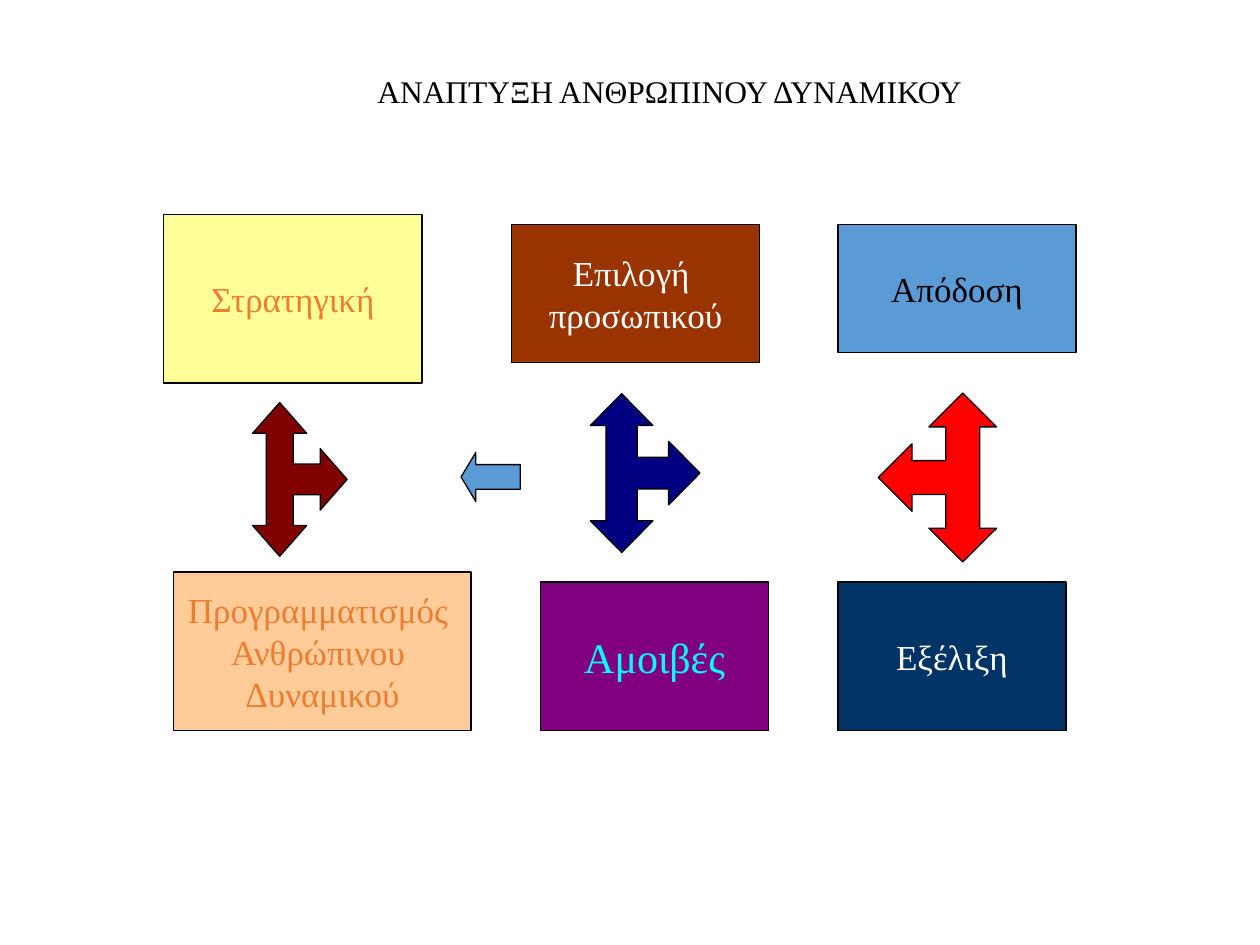
import pptx
import pptx.util
import pptx.dml.color
import pptx.enum.shapes
import pptx.enum.text

Inches = pptx.util.Inches
Pt = pptx.util.Pt
MSO_SHAPE = pptx.enum.shapes.MSO_SHAPE
ANCHOR = pptx.enum.text.MSO_ANCHOR
FONT = "Times New Roman"

# left, top, width, height, fill, text colour, text size, lines
BOXES = [
    (1.3, 1.7, 2.05, 1.34, "FFFF99", "ED7D31", 20, ["Στρατηγική"]),
    (4.06, 1.78, 1.97, 1.1, "993300", "FFFFFF", 20, ["Επιλογή ", "προσωπικού"]),
    (6.65, 1.78, 1.89, 1.02, "5B9BD5", "000000", 20, ["Απόδοση"]),
    (1.38, 4.54, 2.36, 1.26, "FFCC99", "ED7D31", 20,
     ["Προγραμματισμός ", "Ανθρώπινου ", "Δυναμικού"]),
    (4.29, 4.62, 1.81, 1.18, "800080", "00FFFF", 24, ["Αμοιβές"]),
    (6.65, 4.62, 1.81, 1.18, "003366", "FFFFFF", 20, ["Εξέλιξη"]),
]

# left, top, width, height before rotation, rotation, fill
THREE_WAY_ARROWS = [
    (1.77, 3.43, 1.22, 0.75, 90, "800000"),
    (4.49, 3.32, 1.26, 0.87, 90, "000080"),
    (6.77, 3.32, 1.34, 0.94, 270, "FF0000"),
]

# Left-right-up arrow on a grid of 10 columns and 7 rows
ARROW_COLS, ARROW_ROWS = 10, 7
ARROW_POINTS = [
    (5, 0), (7, 2), (6, 2), (6, 4), (8, 4), (8, 3), (10, 5), (8, 7), (8, 6),
    (2, 6), (2, 7), (0, 5), (2, 3), (2, 4), (4, 4), (4, 2), (3, 2),
]


def rgb(value):
    return pptx.dml.color.RGBColor.from_string(value)


def style_shape(s, fill):
    s.shadow.inherit = False
    s.fill.solid()
    s.fill.fore_color.rgb = rgb(fill)
    s.line.color.rgb = rgb("000000")
    s.line.width = Pt(0.75)


def write_lines(tf, lines, size, color):
    for i, line in enumerate(lines):
        p = tf.add_paragraph() if i else tf.paragraphs[0]
        p.alignment = pptx.enum.text.PP_ALIGN.CENTER
        r = p.add_run()
        r.text = line
        r.font.name = FONT
        r.font.size = Pt(size)
        r.font.color.rgb = rgb(color)


def add_title(slide, left, top, width, height):
    s = slide.shapes.title
    s.left, s.top = Inches(left), Inches(top)
    s.width, s.height = Inches(width), Inches(height)
    tf = s.text_frame
    tf.word_wrap = True
    tf.auto_size = pptx.enum.text.MSO_AUTO_SIZE.SHAPE_TO_FIT_TEXT
    tf.vertical_anchor = ANCHOR.TOP
    write_lines(tf, ["ΑΝΑΠΤΥΞΗ ΑΝΘΡΩΠΙΝΟΥ ΔΥΝΑΜΙΚΟΥ"], 18, "000000")


def add_box(slide, left, top, width, height, fill, color, size, lines):
    s = slide.shapes.add_shape(MSO_SHAPE.RECTANGLE, Inches(left), Inches(top),
                               Inches(width), Inches(height))
    style_shape(s, fill)
    tf = s.text_frame
    tf.word_wrap = False
    tf.vertical_anchor = ANCHOR.MIDDLE
    write_lines(tf, lines, size, color)


def add_three_way_arrow(slide, left, top, width, height, rotation, fill):
    scale = (Inches(width) / ARROW_COLS, Inches(height) / ARROW_ROWS)
    builder = slide.shapes.build_freeform(*ARROW_POINTS[0], scale=scale)
    builder.add_line_segments(ARROW_POINTS[1:], close=True)
    s = builder.convert_to_shape(Inches(left), Inches(top))
    s.rotation = rotation
    style_shape(s, fill)


def add_left_arrow(slide, left, top, width, height, fill):
    s = slide.shapes.add_shape(MSO_SHAPE.LEFT_ARROW, Inches(left), Inches(top),
                               Inches(width), Inches(height))
    s.adjustments[0] = 0.5
    s.adjustments[1] = 0.3
    style_shape(s, fill)


def main():
    prs = pptx.Presentation()
    prs.slide_width, prs.slide_height = Inches(10), Inches(7.5)
    slide = prs.slides.add_slide(prs.slide_layouts[5])
    add_title(slide, 1.93, 0.52, 6.77, 0.4)
    for box in BOXES:
        add_box(slide, *box)
    for arrow in THREE_WAY_ARROWS:
        add_three_way_arrow(slide, *arrow)
    add_left_arrow(slide, 3.66, 3.59, 0.47, 0.39, "5B9BD5")
    prs.save("out.pptx")


if __name__ == "__main__":
    main()
